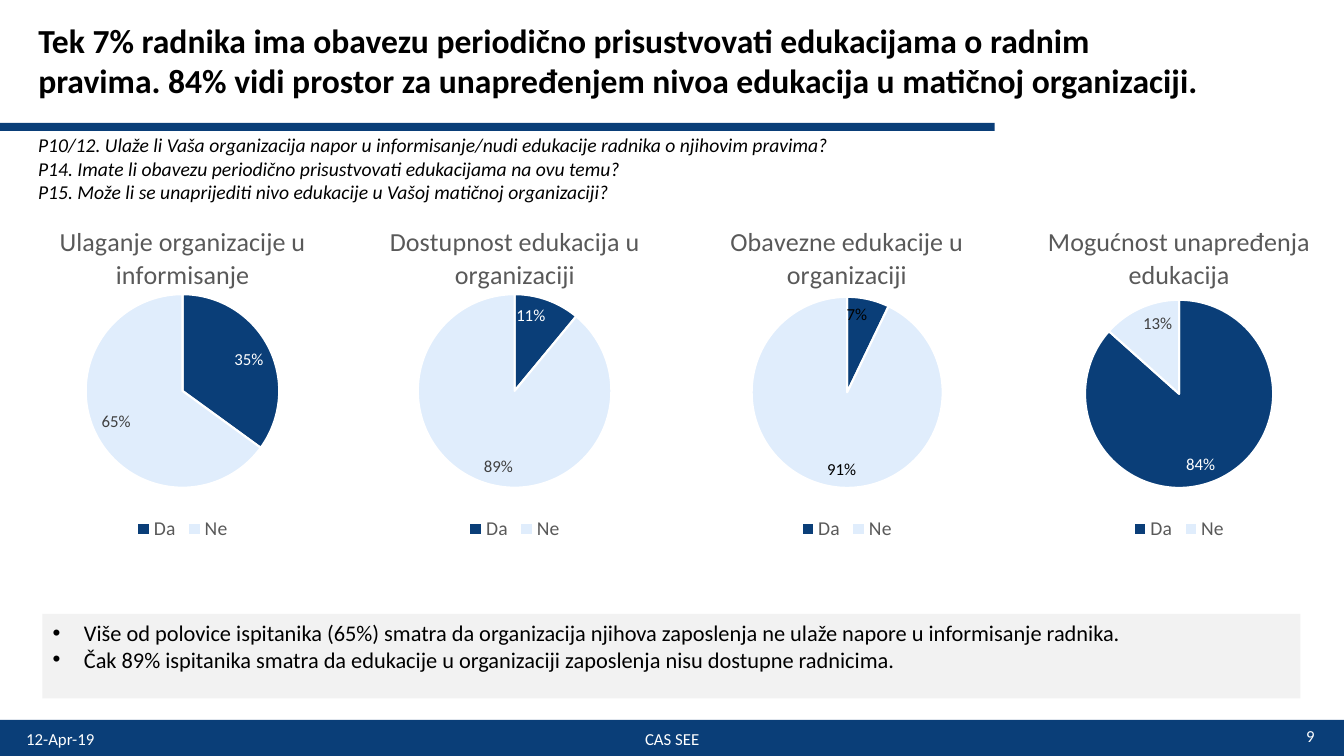
"""Build the slide on workers' rights education with four pie charts."""
from lxml import etree
from pptx import Presentation
from pptx.chart.data import CategoryChartData
from pptx.dml.color import RGBColor
from pptx.enum.chart import XL_CHART_TYPE, XL_LABEL_POSITION, XL_LEGEND_POSITION
from pptx.enum.shapes import MSO_SHAPE
from pptx.enum.text import MSO_ANCHOR, MSO_AUTO_SIZE, PP_ALIGN
from pptx.oxml.ns import qn
from pptx.util import Cm, Pt

LEFT, CENTER, RIGHT, JUSTIFY = PP_ALIGN.LEFT, PP_ALIGN.CENTER, PP_ALIGN.RIGHT, PP_ALIGN.JUSTIFY
TOP, MIDDLE = MSO_ANCHOR.TOP, MSO_ANCHOR.MIDDLE
NO_AUTOFIT = MSO_AUTO_SIZE.NONE
RECTANGLE = MSO_SHAPE.RECTANGLE
PIE = XL_CHART_TYPE.PIE
INSIDE_END = XL_LABEL_POSITION.INSIDE_END
BOTTOM = XL_LEGEND_POSITION.BOTTOM

FONT = "Calibri"
COLORS = {
    "navy": "0A3E78", "pale": "E0EDFC", "panel": "F2F2F2", "black": "000000",
    "white": "FFFFFF", "heading": "595959", "label": "404040",
}

TITLE = ("Tek 7% radnika ima obavezu periodično prisustvovati edukacijama o radnim pravima. "
         "84% vidi prostor za unapređenjem nivoa edukacija u matičnoj organizaciji.")
QUESTIONS = [
    "P10/12. Ulaže li Vaša organizacija napor u informisanje/nudi edukacije radnika o njihovim pravima?",
    "P14. Imate li obavezu periodično prisustvovati edukacijama na ovu temu?",
    "P15. Može li se unaprijediti nivo edukacije u Vašoj matičnoj organizaciji?",
]
FINDINGS = [
    "Više od polovice ispitanika (65%) smatra da organizacija njihova zaposlenja ne ulaže napore "
    "u informisanje radnika.",
    "Čak 89% ispitanika smatra da edukacije u organizaciji zaposlenja nisu dostupne radnicima.",
]
ANSWERS = ["Da", "Ne"]
PIES = [
    ("Ulaganje organizacije u informisanje", (0.35, 0.65),
     (0.267, 0.258, 0.465, 0.573), ("white", "label")),
    ("Dostupnost edukacija u organizaciji", (0.11, 0.89),
     (0.267, 0.258, 0.465, 0.573), ("white", "label")),
    ("Obavezne edukacije u organizaciji", (0.07, 0.91),
     (0.271, 0.266, 0.459, 0.565), ("black", "black")),
    ("Mogućnost unapređenja edukacija", (0.84, 0.13),
     (0.274, 0.275, 0.452, 0.556), ("white", "label")),
]
FOOTER = [
    ("12-Apr-19", (0.41, 18.11, 7.9, 1.02), LEFT),
    ("CAS SEE", (11.58, 18.11, 10.72, 1.02), CENTER),
    ("9", (25.48, 18.03, 7.9, 1.02), RIGHT),
]
BARS = [(0, 18.14, 33.87, 0.91), (0, 3.1, 25.07, 0.2)]
PIE_LEFT, PIE_TOP, PIE_STEP = -0.64, 5.21, 8.37
PIE_WIDTH, PIE_HEIGHT = 10.49, 8.53
BULLET_INDENT = Cm(0.79)


def color(name):
    return RGBColor.from_string(COLORS[name])


def style_font(font, size, tint, bold=False, italic=False):
    font.name, font.size, font.bold, font.italic = FONT, Pt(size), bold, italic
    font.color.rgb = color(tint)


def place(shape, area):
    shape.left, shape.top, shape.width, shape.height = map(Cm, area)


def write(box, lines, size, tint="black", align=LEFT, anchor=TOP, bullet=False, **style):
    frame = box.text_frame
    frame.word_wrap = True
    frame.auto_size = NO_AUTOFIT
    frame.vertical_anchor = anchor
    for number, line in enumerate(lines):
        para = frame.add_paragraph() if number else frame.paragraphs[0]
        para.alignment = align
        para.space_before = Pt(0)
        if bullet:
            properties = para._p.get_or_add_pPr()
            properties.set("marL", str(BULLET_INDENT))
            properties.set("indent", str(-BULLET_INDENT))
            etree.SubElement(properties, qn("a:buChar")).set("char", "•")
        span = para.add_run()
        span.text = line
        style_font(span.font, size, tint, **style)


def set_plot_area(chart, fractions):
    plot_area = chart.element.xpath("c:chart/c:plotArea")[0]
    for old in plot_area.findall(qn("c:layout")):
        plot_area.remove(old)
    layout = etree.Element(qn("c:layout"))
    manual = etree.SubElement(layout, qn("c:manualLayout"))
    settings = [("layoutTarget", "inner"), ("xMode", "edge"), ("yMode", "edge")]
    settings += zip("xywh", fractions)
    for tag, value in settings:
        etree.SubElement(manual, qn(f"c:{tag}")).set("val", str(value))
    plot_area.insert(0, layout)


def add_pie(page, left, heading, values, fractions, label_tints):
    data = CategoryChartData(number_format="0%")
    data.categories = ANSWERS
    data.add_series(heading, values)
    chart = page.shapes.add_chart(
        PIE, Cm(left), Cm(PIE_TOP), Cm(PIE_WIDTH), Cm(PIE_HEIGHT), data).chart
    style_font(chart.font, 10, "black")
    chart.has_title = True
    title = chart.chart_title.text_frame
    title.text = heading
    style_font(title.paragraphs[0].runs[0].font, 18.6, "heading")
    chart.has_legend = True
    chart.legend.position = BOTTOM
    chart.legend.include_in_layout = False
    style_font(chart.legend.font, 14, "heading")
    set_plot_area(chart, fractions)
    plot = chart.plots[0]
    plot.vary_by_categories = True
    for number, (fill, label_tint) in enumerate(zip(("navy", "pale"), label_tints)):
        point = plot.series[0].points[number]
        point.format.fill.solid()
        point.format.fill.fore_color.rgb = color(fill)
        point.format.line.color.rgb = color("white")
        point.format.line.width = Pt(1.5)
        style_font(point.data_label.font, 12, label_tint)
        point.data_label.position = INSIDE_END


def main():
    deck = Presentation()
    deck.slide_width, deck.slide_height = Cm(33.87), Cm(19.05)
    page = deck.slides.add_slide(deck.slide_layouts[1])

    for area in BARS:
        bar = page.shapes.add_shape(RECTANGLE, *map(Cm, area))
        bar.shadow.inherit = False
        bar.fill.solid()
        bar.fill.fore_color.rgb = color("navy")
        bar.line.fill.background()

    title = page.shapes.title
    place(title, (0.71, -0.08, 30.1, 3.18))
    write(title, [TITLE], 24, anchor=MIDDLE, bold=True)

    questions = page.shapes.add_textbox(*map(Cm, (0.71, 3.23, 20.73, 2.06)))
    write(questions, QUESTIONS, 14, align=JUSTIFY, italic=True)

    findings = page.placeholders[1]
    place(findings, (1.07, 15.47, 31.7, 2.13))
    findings.fill.solid()
    findings.fill.fore_color.rgb = color("panel")
    write(findings, FINDINGS, 16, bullet=True)

    for number, pie in enumerate(PIES):
        add_pie(page, PIE_LEFT + number * PIE_STEP, *pie)

    for text, area, align in FOOTER:
        box = page.shapes.add_textbox(*map(Cm, area))
        write(box, [text], 12, tint="white", align=align, anchor=MIDDLE)

    deck.save("out.pptx")


if __name__ == "__main__":
    main()
